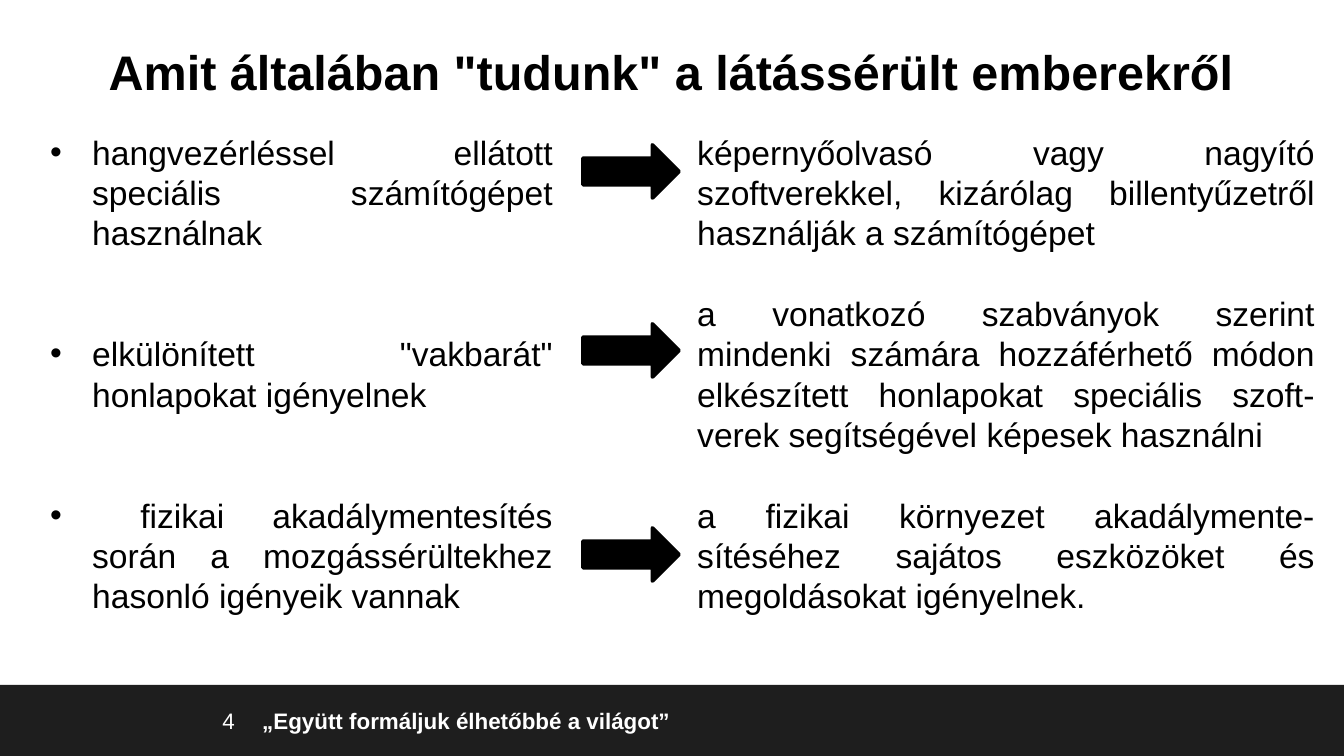
from dataclasses import dataclass

from lxml.etree import SubElement
from pptx import Presentation
from pptx.dml.color import RGBColor
from pptx.enum.shapes import MSO_SHAPE as Shape
from pptx.enum.text import MSO_ANCHOR as Anchor, PP_ALIGN as Align
from pptx.oxml.ns import qn
from pptx.util import Emu, Pt

EMU_PER_PX = 914400 / 134.4


@dataclass(frozen=True)
class Theme:
    font: str = "Arial"
    ink: RGBColor = RGBColor(0, 0, 0)
    paper: RGBColor = RGBColor(255, 255, 255)
    band: RGBColor = RGBColor(0x1E, 0x1E, 0x1E)
    title_size: int = 26
    body_size: int = 18
    footer_size: int = 12
    body_line: float = 21.6
    outline: int = 2


THEME = Theme()

BELIEFS = [
    "hangvezérléssel ellátott speciális számítógépet használnak",
    'elkülönített "vakbarát" honlapokat igényelnek',
    " fizikai akadálymentesítés során a mozgássérültekhez hasonló igényeik vannak",
]
FACTS = [
    "képernyőolvasó vagy nagyító szoftverekkel, kizárólag billentyűzetről "
    "használják a számítógépet",
    "a vonatkozó szabványok szerint mindenki számára hozzáférhető módon "
    "elkészített honlapokat speciális szoft-verek segítségével képesek használni",
    "a fizikai környezet akadálymente-sítéséhez sajátos eszközöket és "
    "megoldásokat igényelnek.",
]
ARROW_TOPS = [145, 324, 528]


def px(length):
    return Emu(round(length * EMU_PER_PX))


def add_shape(slide, preset, box, color):
    shape = slide.shapes.add_shape(preset, *map(px, box))
    shape.shadow.inherit = False
    shape.fill.solid()
    shape.fill.fore_color.rgb = color
    shape.line.fill.background()
    return shape


def add_arrow(slide, top):
    arrow = add_shape(slide, Shape.RIGHT_ARROW, (583, top, 96, 53), THEME.ink)
    arrow.line.color.rgb = THEME.ink
    arrow.line.width = Pt(THEME.outline)
    SubElement(arrow.line._get_or_add_ln(), qn("a:round"))


def add_text(slide, box, texts, size, color, align, bold=False, anchor=Anchor.TOP):
    """Add a wrapped text box with one paragraph per text; return its paragraphs."""
    frame = slide.shapes.add_textbox(*map(px, box)).text_frame
    frame.word_wrap = True
    frame.vertical_anchor = anchor
    frame.text = "\n".join(texts)
    for paragraph in frame.paragraphs:
        paragraph.alignment = align
        for run in paragraph.runs:
            run.font.name = THEME.font
            run.font.size = Pt(size)
            run.font.bold = bold
            run.font.color.rgb = color
    return frame.paragraphs


def add_bullet(paragraph):
    properties = paragraph._p.get_or_add_pPr()
    properties.set("marL", str(px(42)))
    properties.set("indent", str(-px(42)))
    SubElement(properties, qn("a:buFont"), typeface=THEME.font)
    SubElement(properties, qn("a:buChar"), char="•")


def add_column(slide, box, texts, gap_lines, bulleted=False):
    paragraphs = add_text(slide, box, texts, THEME.body_size, THEME.ink, Align.JUSTIFY)
    for index, paragraph in enumerate(paragraphs):
        if bulleted:
            add_bullet(paragraph)
        paragraph.line_spacing = Pt(THEME.body_line)
        if index:
            paragraph.space_before = Pt(gap_lines * THEME.body_line)


def add_footer(slide):
    add_shape(slide, Shape.RECTANGLE, (0, 685, 1344, 71), THEME.band)
    add_text(slide, (249, 701, 847, 40), ["„Együtt formáljuk élhetőbbé a világot”"],
             THEME.footer_size, THEME.paper, Align.JUSTIFY, True, Anchor.MIDDLE)
    add_text(slide, (122, 701, 126, 40), ["4"],
             THEME.footer_size, THEME.paper, Align.RIGHT, anchor=Anchor.MIDDLE)


def main():
    presentation = Presentation()
    presentation.slide_width = px(1344)
    presentation.slide_height = px(756)
    slide = presentation.slides.add_slide(presentation.slide_layouts[6])
    slide.background.fill.solid()
    slide.background.fill.fore_color.rgb = THEME.paper

    add_footer(slide)
    add_text(slide, (37, 35, 1270, 122),
             ['Amit általában "tudunk" a látássérült emberekről'],
             THEME.title_size, THEME.ink, Align.CENTER, True)
    add_column(slide, (684, 125, 644, 543), FACTS, 1)
    add_column(slide, (37, 125, 529, 503), BELIEFS, 2, bulleted=True)
    for top in ARROW_TOPS:
        add_arrow(slide, top)

    presentation.save("out.pptx")


if __name__ == "__main__":
    main()
